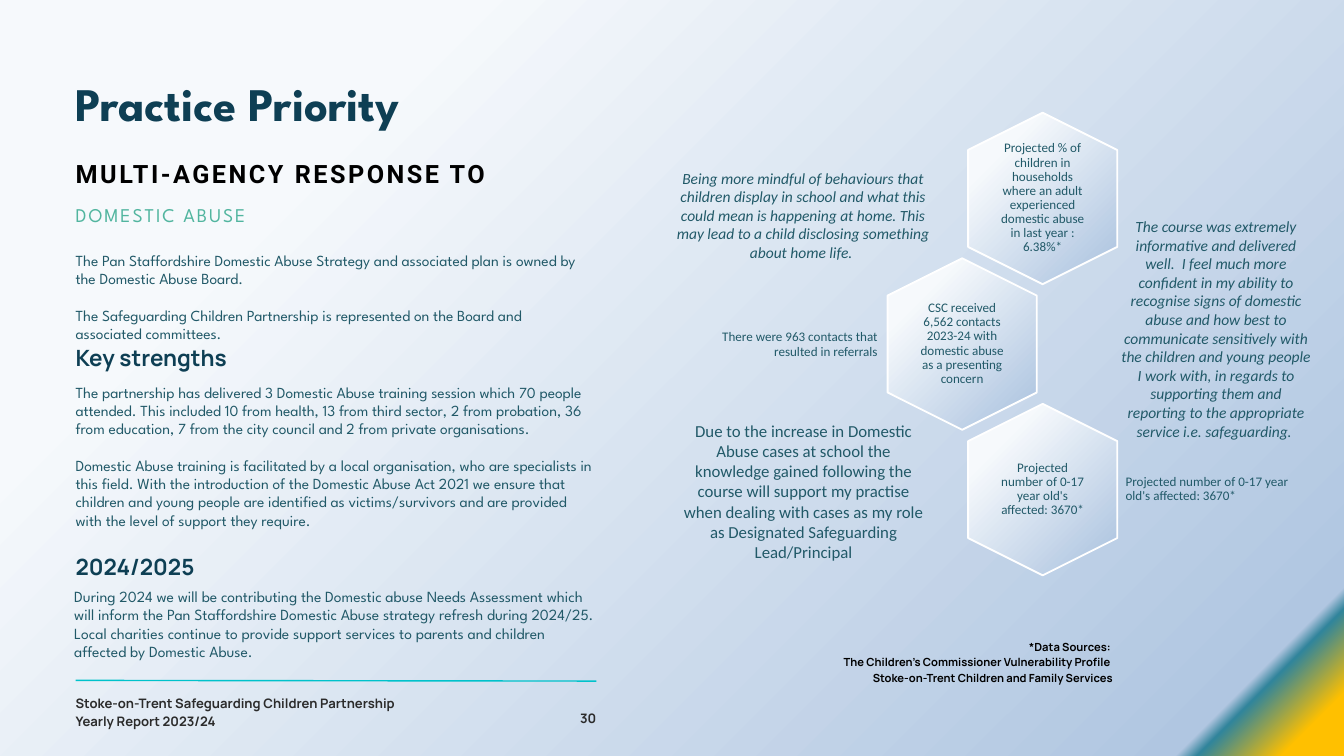
from pptx import Presentation
from pptx.dml.color import RGBColor
from pptx.enum.shapes import MSO_CONNECTOR, MSO_SHAPE
from pptx.enum.text import MSO_ANCHOR, MSO_AUTO_SIZE, PP_ALIGN
from pptx.oxml import parse_xml
from pptx.oxml.ns import nsdecls, qn
from pptx.util import Emu, Pt

PX = 9525
NAVY = RGBColor(0x0E, 0x3F, 0x54)
TEAL = RGBColor(0x21, 0x59, 0x68)
GREEN = RGBColor(0x51, 0xB5, 0x9F)
CYAN = RGBColor(0x00, 0xC2, 0xCB)
CHARCOAL = RGBColor(0x2B, 0x2B, 0x2B)
BLACK = RGBColor(0, 0, 0)
WHITE = RGBColor(0xFF, 0xFF, 0xFF)
GRADIENT = [(3, "FFC000"), (7, "31859C"), (8, "B0C6E1"), (78, "F6F9FC")]

LEFT = 108
HEX_W, HEX_H = 245, 213
HEX_TOP, HEX_PITCH = 177, 208
LABEL_W, LABEL_H = 147, 168

TITLE = dict(font="League Spartan", size=50, color=NAVY, bold=True, leading=Pt(60))
HEADING = dict(font="Manrope", size=24, color=NAVY, bold=True, leading=Pt(28.8))
BODY = dict(font="League Spartan", size=16.5, color=TEAL, leading=Pt(19.6), gap=19.6)
FOOTER = dict(font="Manrope", size=14, color=CHARCOAL, bold=True, leading=Pt(19.6))
SOURCES = dict(font="Manrope", size=12, color=BLACK, bold=True, leading=Pt(16.8),
               align=PP_ALIGN.RIGHT)
QUOTE = dict(font="Calibri", size=16.6, color=TEAL, italic=True, align=PP_ALIGN.CENTER)
LABEL = dict(font="Calibri", size=14, color=TEAL, leading=0.9)

STRATEGY = [
    "The Pan Staffordshire Domestic Abuse Strategy and associated plan is owned by the "
    "Domestic Abuse Board.",
    "The Safeguarding Children Partnership is represented on the Board and associated "
    "committees.",
]
STRENGTHS = [
    "The partnership has delivered 3 Domestic Abuse training session which 70 people "
    "attended. This included 10 from health, 13 from third sector, 2 from probation, 36 "
    "from education, 7 from the city council and 2 from private organisations.",
    "Domestic Abuse training is facilitated by a local organisation, who are specialists "
    "in this field. With the introduction of the Domestic Abuse Act 2021 we ensure that "
    "children and young people are identified as victims/survivors and are provided with "
    "the level of support they require.",
]
PLANS = [
    "During 2024 we will be contributing the Domestic abuse Needs Assessment which will "
    "inform the Pan Staffordshire Domestic Abuse strategy refresh during 2024/25. Local "
    "charities continue to provide support services to parents and children affected by "
    "Domestic Abuse.",
]
DATA_SOURCES = [
    "*Data Sources: ",
    "The Children’s Commissioner Vulnerability Profile ",
    "Stoke-on-Trent Children and Family Services",
]
MINDFUL = [
    "Being more mindful of behaviours that children display in school and what this could "
    "mean is happening at home. This may lead to a child disclosing something about home "
    "life. ",
]
SCHOOL = [
    "Due to the increase in Domestic Abuse cases at school the knowledge gained following "
    "the course will support my practise when dealing with cases as my role as Designated "
    "Safeguarding Lead/Principal",
]
COURSE = [
    "The course was extremely informative and delivered well.  I feel much more confident "
    "in my ability to recognise signs of domestic abuse and how best to communicate "
    "sensitively with the children and young people I work with, in regards to supporting "
    "them and reporting to the appropriate service i.e. safeguarding. ",
]
AFFECTED = "Projected number of 0-17 year old's affected: 3670*"
HEXAGONS = [
    (1367, "Projected % of children in households where an adult experienced domestic "
           "abuse in last year : 6.38%*"),
    (1252, "CSC received 6,562 contacts 2023-24 with domestic abuse as a presenting concern"),
    (1367, AFFECTED),
]


def px(*values):
    """Turn pixel lengths into EMU."""
    return [Emu(v * PX) for v in values]


def corner_gradient(fill, element):
    """Fill with the gradient that spreads from the bottom right corner."""
    fill.gradient()
    stops = "".join(f'<a:gs pos="{pos * 1000}"><a:srgbClr val="{color}"/></a:gs>'
                    for pos, color in GRADIENT)
    old = next(element.iter(qn("a:gradFill")))
    old.getparent().replace(old, parse_xml(
        f'<a:gradFill {nsdecls("a")} rotWithShape="1"><a:gsLst>{stops}</a:gsLst>'
        '<a:path path="circle"><a:fillToRect l="100000" t="100000"/></a:path>'
        '</a:gradFill>'))


def write(sp, box, lines, font, size, color, bold=False, italic=False, leading=None,
          gap=0, align=PP_ALIGN.LEFT, spacing=0, inset=(0, 0), middle=False):
    """Place a text shape and write one formatted run per paragraph."""
    sp.left, sp.top, sp.width, sp.height = px(*box)
    tf = sp.text_frame
    tf.word_wrap = True
    tf.auto_size = MSO_AUTO_SIZE.NONE if middle else MSO_AUTO_SIZE.SHAPE_TO_FIT_TEXT
    tf.vertical_anchor = MSO_ANCHOR.MIDDLE if middle else MSO_ANCHOR.TOP
    tf.margin_left, tf.margin_top = tf.margin_right, tf.margin_bottom = px(*inset)
    for i, line in enumerate(lines):
        p = tf.add_paragraph() if i else tf.paragraphs[0]
        p.alignment = align
        p.line_spacing = leading
        p.space_before = Pt(gap if i else 0)
        r = p.add_run()
        r.text = line
        r.font.name, r.font.size = font, Pt(size)
        r.font.bold, r.font.italic = bold, italic
        r.font.color.rgb = color
        if spacing:
            r._r.get_or_add_rPr().set("spc", str(spacing))


def add_text(s, box, lines, **style):
    """Add a text box."""
    write(s.shapes.add_textbox(0, 0, 0, 0), box, lines, **style)


def add_label(s, box, text, align):
    """Add a vertically centred label."""
    add_text(s, box, [text], align=align, inset=(6, 6), middle=True, **LABEL)


def add_hexagon(s, left, top, text):
    """Add an upright hexagon with its label in the centre."""
    sp = s.shapes.add_shape(MSO_SHAPE.HEXAGON, *px(left, top, HEX_W, HEX_H))
    sp.rotation = 90
    sp.shadow.inherit = False
    sp.adjustments[0] = 0.25
    corner_gradient(sp.fill, sp.element)
    sp.line.color.rgb = WHITE
    sp.line.width = Pt(2)
    add_label(s, (left + (HEX_W - LABEL_W) // 2, top + (HEX_H - LABEL_H) // 2,
                  LABEL_W, LABEL_H), text, PP_ALIGN.CENTER)


def add_rule(s, x1, y1, x2, y2):
    """Add the line above the footer."""
    c = s.shapes.add_connector(MSO_CONNECTOR.STRAIGHT, *px(x1, y1, x2, y2))
    c.line.color.rgb = CYAN
    c.line.width = Pt(1.5)
    c.element.spPr.append(parse_xml(f'<a:effectLst {nsdecls("a")}/>'))


def main():
    """Build the slide and save it."""
    prs = Presentation()
    prs.slide_width, prs.slide_height = px(1920, 1080)
    s = prs.slides.add_slide(prs.slide_layouts[5])
    corner_gradient(s.background.fill, s.element)

    write(s.shapes.title, (LEFT, 107, 1128, 81), ["Practice Priority"], **TITLE)
    add_text(s, (LEFT, 224, 612, 45), ["MULTI-AGENCY RESPONSE TO"], font="Roboto", size=27,
             color=BLACK, bold=True, leading=Pt(33.8), spacing=270)
    add_text(s, (LEFT, 289, 612, 34), ["DOMESTIC ABUSE"], font="League Spartan", size=20.8,
             color=GREEN, leading=Pt(25.9), spacing=210)
    add_text(s, (LEFT, 359, 730, 187), STRATEGY, **BODY)
    add_text(s, (LEFT, 492, 744, 38), ["Key strengths"], **HEADING)
    add_text(s, (LEFT, 547, 744, 268), STRENGTHS, **BODY)
    add_text(s, (LEFT, 790, 275, 40), ["2024/2025"], **HEADING)
    add_text(s, (106, 839, 746, 108), PLANS, **{**BODY, "size": 16.6})

    add_rule(s, LEFT, 972, 852, 973)
    add_text(s, (LEFT, 990, 526, 53), ["Stoke-on-Trent Safeguarding Children Partnership",
                                       "Yearly Report 2023/24"], **FOOTER)
    add_text(s, (742, 1011, 110, 26), ["30"], align=PP_ALIGN.RIGHT, **FOOTER)
    add_text(s, (924, 911, 666, 66), DATA_SOURCES, **SOURCES)

    for i, (left, text) in enumerate(HEXAGONS):
        add_hexagon(s, left, HEX_TOP + i * HEX_PITCH, text)
    add_label(s, (996, 419, 264, 147), "There were 963 contacts that resulted in referrals",
              PP_ALIGN.RIGHT)
    add_label(s, (1602, 626, 273, 147), AFFECTED, PP_ALIGN.LEFT)

    add_text(s, (953, 236, 388, 144), MINDFUL, inset=(10, 5), **QUOTE)
    add_text(s, (967, 596, 362, 213), SCHOOL, inset=(10, 5),
             **{**QUOTE, "size": 18, "italic": False})
    add_text(s, (1590, 305, 294, 331), COURSE, inset=(10, 5), **QUOTE)
    prs.save("out.pptx")


if __name__ == "__main__":
    main()
